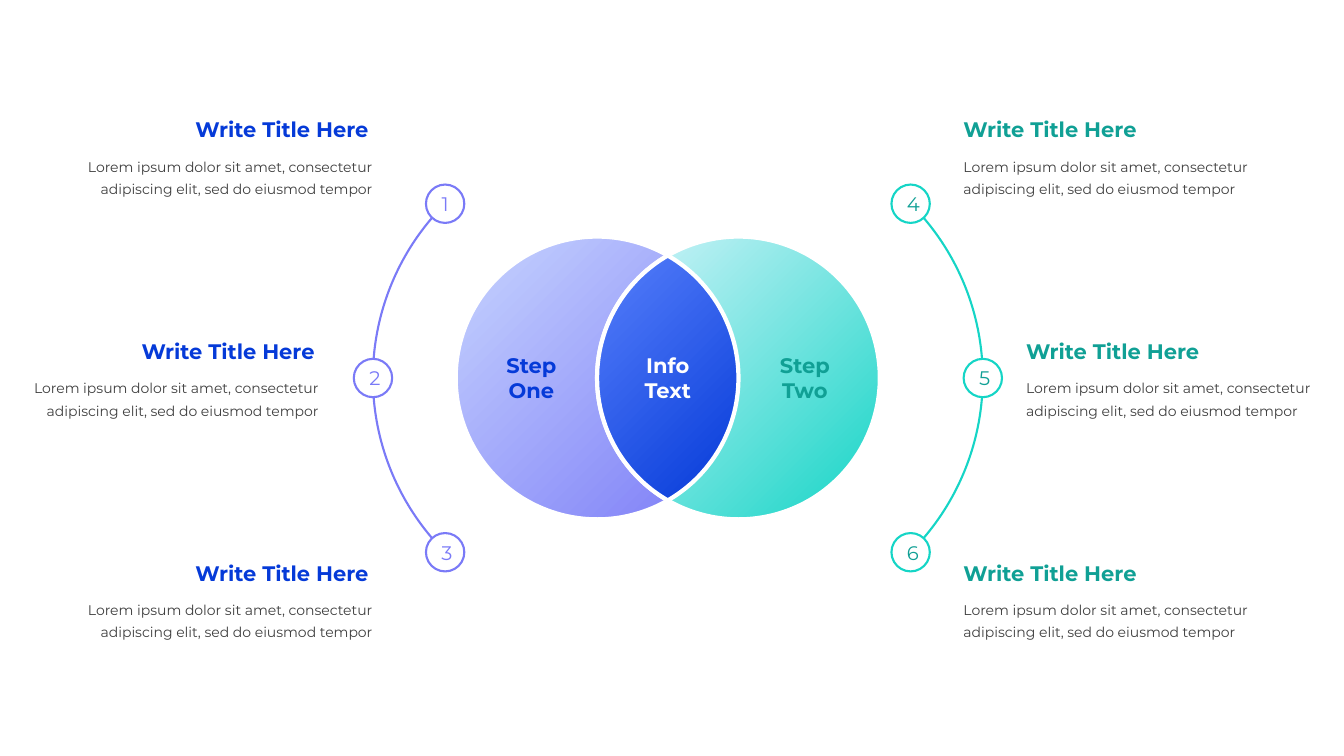
from math import cos, radians, sin

from pptx import Presentation
from pptx.dml.color import RGBColor
from pptx.enum.shapes import MSO_SHAPE as Preset
from pptx.enum.text import MSO_ANCHOR as Anchor, PP_ALIGN as Align
from pptx.util import Pt

COLORS = {
    "white": "FFFFFF", "body": "404040",
    "blue": "053AD8", "blue light": "567FFB",
    "violet": "7A7AF7", "violet light": "C7D4FE",
    "teal": "10A095", "aqua": "15D5C6", "aqua light": "D7F4FB",
}
FONT = "Montserrat"
BODY = "Lorem ipsum dolor sit amet, consectetur adipiscing elit, sed do eiusmod tempor"
MIDDLE = 270
ARC_RADIUS, ARC_END, BADGE = 176, 44.65, 27.4
VENN_RADIUS = 101
ROW_GAP = 158.4


def rgb(name):
    return RGBColor.from_string(COLORS[name])


def outline(shape, color, width):
    shape.shadow.inherit = False
    shape.line.color.rgb = rgb(color)
    shape.line.width = Pt(width)


def diagonal_gradient(shape, first, last):
    shape.fill.gradient()
    shape.fill.gradient_angle = 315
    for stop, color in zip(shape.fill.gradient_stops, (first, last)):
        stop.color.rgb = rgb(color)


def write(frame, lines, size, color, align, bold=False, spacing=None):
    for index, line in enumerate(lines):
        para = frame.add_paragraph() if index else frame.paragraphs[0]
        para.alignment = align
        if spacing:
            para.line_spacing = Pt(spacing)
        run = para.add_run()
        run.text = line
        run.font.name, run.font.size, run.font.bold = FONT, Pt(size), bold
        run.font.color.rgb = rgb(color)


def add_text(page, left, top, width, height, lines, size, color,
             align=Align.LEFT, wrap=True, anchor=Anchor.TOP, **style):
    box = page.shapes.add_textbox(Pt(left), Pt(top), Pt(width), Pt(height))
    box.text_frame.word_wrap = wrap
    box.text_frame.vertical_anchor = anchor
    write(box.text_frame, lines, size, color, align, **style)


def add_round(page, preset, center_x, center_y, radius):
    return page.shapes.add_shape(preset, Pt(center_x - radius), Pt(center_y - radius),
                                 Pt(2 * radius), Pt(2 * radius))


def add_numbered_arc(page, center_x, side, first_number, line_color, number_color):
    """Draw an arc with three badges; side is -1 for left and 1 for right."""
    arc = add_round(page, Preset.ARC, center_x, MIDDLE, ARC_RADIUS)
    facing = 0 if side > 0 else 180
    for index, angle in enumerate((facing - ARC_END, facing + ARC_END)):
        # One degree is 60000 units, and an adjustment of 1 is 100000 units.
        arc.adjustments[index] = angle % 360 * 0.6
    arc.fill.background()
    outline(arc, line_color, 1.5)

    for row, angle in enumerate((-45, 0, 45)):
        badge = add_round(page, Preset.OVAL,
                          center_x + side * ARC_RADIUS * cos(radians(angle)),
                          MIDDLE + ARC_RADIUS * sin(radians(angle)), BADGE / 2)
        badge.fill.solid()
        badge.fill.fore_color.rgb = rgb("white")
        outline(badge, line_color, 1.5)
        badge.text_frame.vertical_anchor = Anchor.MIDDLE
        write(badge.text_frame, [str(first_number + row)], 14, number_color, Align.CENTER)


def add_venn(page, center_x):
    """Draw two circles, each through the other's centre, and their overlap."""
    radius = VENN_RADIUS
    left_center, right_center = center_x - radius / 2, center_x + radius / 2
    for circle_x, first, last in ((left_center, "violet light", "violet"),
                                  (right_center, "aqua light", "aqua")):
        circle = add_round(page, Preset.OVAL, circle_x, MIDDLE, radius)
        diagonal_gradient(circle, first, last)
        outline(circle, "white", 3)

    points = [(Pt(arc_x + radius * cos(radians(angle))),
               Pt(MIDDLE + radius * sin(radians(angle))))
              for arc_x, start in ((left_center, -60), (right_center, 120))
              for angle in range(start, start + 120, 2)]
    builder = page.shapes.build_freeform(*points[0])
    builder.add_line_segments(points[1:], close=True)
    overlap = builder.convert_to_shape()
    diagonal_gradient(overlap, "blue light", "blue")
    outline(overlap, "white", 3)

    for label_x, lines, color in ((center_x - 97.4, ("Step", "One"), "blue"),
                                  (center_x + 97.9, ("Step", "Two"), "teal"),
                                  (center_x, ("Info", "Text"), "white")):
        add_text(page, label_x - 25.5, MIDDLE - 22, 51, 44, lines, 15, color,
                 Align.CENTER, wrap=False, anchor=Anchor.MIDDLE, bold=True)


def add_captions(page, edges, side, color):
    """Place a title and a body per row, against the edge that faces the arc."""
    title_width, body_width = 140.4, 229.7
    for row, edge in enumerate(edges):
        top = 80 + row * ROW_GAP
        title_left = edge if side > 0 else edge - title_width
        body_left = edge if side > 0 else edge - body_width
        add_text(page, title_left, top, title_width, 25.4, ["Write Title Here"],
                 15, color, bold=True)
        add_text(page, body_left, top + 25.4, body_width, 38.2, [BODY], 10, "body",
                 Align.LEFT if side > 0 else Align.RIGHT, spacing=16)


def main():
    deck = Presentation()
    deck.slide_width, deck.slide_height = Pt(960), Pt(540)
    page = deck.slides.add_slide(deck.slide_layouts[6])
    add_numbered_arc(page, 442.4, -1, 1, "violet", "violet")
    add_venn(page, 477)
    add_numbered_arc(page, 526, 1, 4, "aqua", "teal")
    add_captions(page, (272.9, 234.4, 272.9), -1, "blue")
    add_captions(page, (681.1, 725.8, 681.1), 1, "teal")
    deck.save("out.pptx")


if __name__ == "__main__":
    main()
